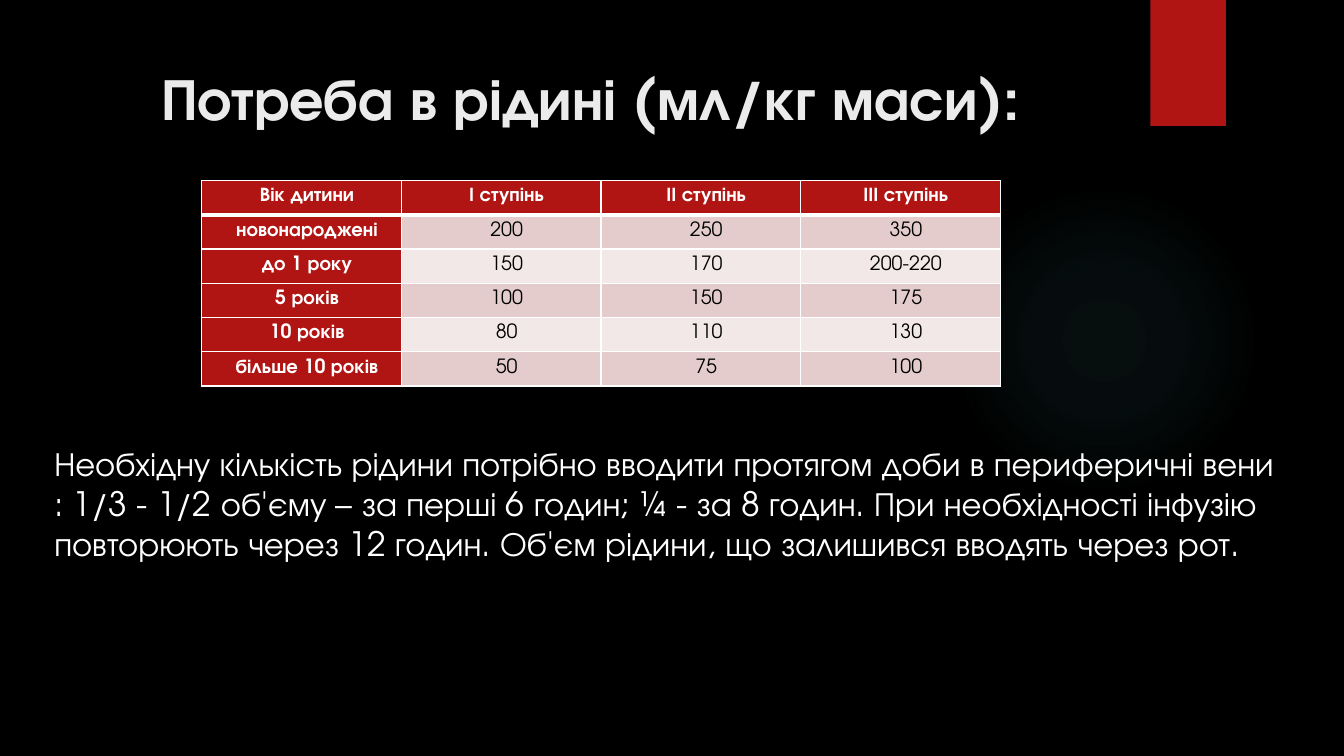
from lxml import etree
from pptx import Presentation
from pptx.dml.color import RGBColor
from pptx.enum.shapes import MSO_SHAPE
from pptx.enum.text import MSO_ANCHOR, PP_ALIGN
from pptx.oxml import parse_xml
from pptx.oxml.ns import qn
from pptx.util import Pt

PX = 9144  # 100 px to the inch
FONT = "TeX Gyre Adventor"
RED, WHITE, BLACK = "B01513", "FFFFFF", "000000"
BANDS = ("E4CCCC", "F2E8E7")
NS = "http://schemas.openxmlformats.org/drawingml/2006/main"
OVAL, RECT = MSO_SHAPE.OVAL, MSO_SHAPE.RECTANGLE
CENTER, LEFT = PP_ALIGN.CENTER, PP_ALIGN.LEFT
TOP, MIDDLE = MSO_ANCHOR.TOP, MSO_ANCHOR.MIDDLE

TITLE = "Потреба в рідині (мл/кг маси):"
NOTE = (
    "Необхідну кількість рідини потрібно вводити протягом доби в периферичні вени "
    ": 1/3 - 1/2 об'єму – за перші 6 годин; ¼ - за 8 годин. При необхідності інфузію "
    "повторюють через 12 годин. Об'єм рідини, що залишився вводять через рот."
)
ROWS = [
    ("Вік дитини", "І ступінь", "ІІ ступінь", "ІІІ ступінь"),
    ("новонароджені", "200", "250", "350"),
    ("до 1 року", "150", "170", "200-220"),
    ("5 років", "100", "150", "175"),
    ("10 років", "80", "110", "130"),
    ("більше 10 років", "50", "75", "100"),
]


def px(*sizes):
    return [size * PX for size in sizes]


def paint(fill, color):
    fill.solid()
    fill.fore_color.rgb = RGBColor.from_string(color)


def write(frame, text, size, color, bold=False, align=LEFT):
    par = frame.paragraphs[0]
    par.alignment = align
    run = par.add_run()
    run.text = text
    run.font.name, run.font.size, run.font.bold = FONT, Pt(size), bold
    run.font.color.rgb = RGBColor.from_string(color)
    return par


def add_plain(slide, kind, box):
    shape = slide.shapes.add_shape(kind, *px(*box))
    shape.shadow.inherit = False
    shape.line.fill.background()
    return shape


def add_glow(slide, box):
    """Draw a faint round light that fades towards its rim."""
    glow = add_plain(slide, OVAL, box)
    stops = "".join(
        f'<a:gs pos="{pos}000"><a:srgbClr val="50B9C1">'
        f'<a:alpha val="{alpha}000"/></a:srgbClr></a:gs>'
        for pos, alpha in ((0, 7), (36, 6), (69, 0))
    )
    grad = parse_xml(
        f'<a:gradFill xmlns:a="{NS}" rotWithShape="1"><a:gsLst>{stops}</a:gsLst>'
        '<a:path path="circle"><a:fillToRect l="50000" t="50000" r="50000" b="50000"/>'
        "</a:path></a:gradFill>"
    )
    glow.element.spPr.find(qn("a:prstGeom")).addnext(grad)


def add_title(slide, box):
    title = slide.shapes.title
    title.left, title.top, title.width, title.height = px(*box)
    title.text_frame.word_wrap = True
    title.text_frame.vertical_anchor = MIDDLE
    write(title.text_frame, TITLE, 42, "EBEBEB", True, CENTER)


def add_note(slide, box):
    frame = slide.shapes.add_textbox(*px(*box)).text_frame
    frame.word_wrap = True
    frame.vertical_anchor = TOP
    write(frame, NOTE, 24, WHITE)


def edge_cell(cell, row):
    props = cell._tc.get_or_add_tcPr()
    for side in "LRTB":
        thick = (side, row) in (("B", 0), ("T", 1))
        line = etree.SubElement(props, qn(f"a:ln{side}"), w=str(Pt(3 if thick else 1)))
        fill = etree.SubElement(line, qn("a:solidFill"))
        etree.SubElement(fill, qn("a:srgbClr"), val=WHITE)


def add_doses(slide, box):
    count, width = len(ROWS), len(ROWS[0])
    table = slide.shapes.add_table(count, width, *px(*box)).table
    table.first_row = table.horz_banding = False
    for col in table.columns:
        col.width = box[2] * PX // width
    for r, texts in enumerate(ROWS):
        table.rows[r].height = box[3] * PX // count
        for c, text in enumerate(texts):
            cell = table.cell(r, c)
            head = r == 0 or c == 0
            edge_cell(cell, r)
            paint(cell.fill, RED if head else BANDS[(r - 1) % 2])
            cell.margin_left = cell.margin_right = 7 * PX
            cell.margin_top = cell.margin_bottom = 0
            par = write(cell.text_frame, text, 14, WHITE if head else BLACK, head, CENTER)
            par.line_spacing = Pt(18)
            par._p.get_or_add_pPr().set("indent", str(11 * PX))


def main():
    deck = Presentation()
    deck.slide_width, deck.slide_height = px(1333, 750)
    slide = deck.slides.add_slide(deck.slide_layouts[5])
    paint(slide.background.fill, BLACK)
    add_glow(slide, (941, 183, 308, 308))
    paint(add_plain(slide, RECT, (1141, 0, 75, 125)).fill, RED)
    add_title(slide, (71, 50, 1029, 93))
    add_note(slide, (44, 434, 1233, 262))
    add_doses(slide, (200, 179, 792, 204))
    deck.save("out.pptx")


if __name__ == "__main__":
    main()
